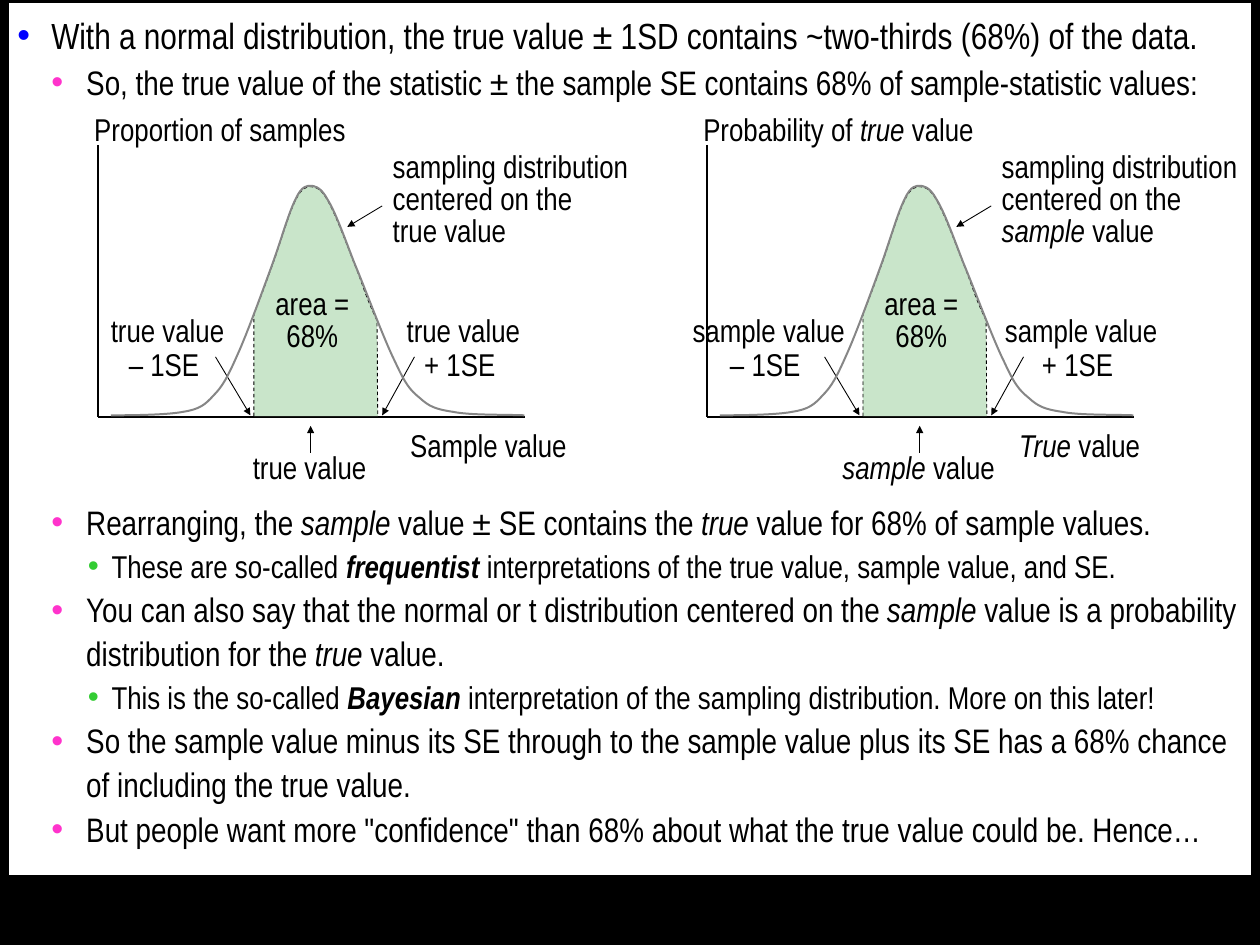
"""Build a slide comparing the sampling distribution of a statistic with that of its true value."""
from dataclasses import dataclass

from lxml.etree import SubElement
from pptx import Presentation
from pptx.dml.color import RGBColor as RGB
from pptx.enum.dml import MSO_LINE_DASH_STYLE as Dash
from pptx.enum.shapes import MSO_CONNECTOR as Conn, MSO_SHAPE as Shape
from pptx.enum.text import MSO_ANCHOR as Anchor, MSO_AUTO_SIZE as Auto, PP_ALIGN as Align
from pptx.oxml.ns import qn
from pptx.util import Inches, Pt

Point = tuple[float, float]


@dataclass(frozen=True)
class Theme:
    font: str = "Arial Narrow"
    bullet_font: str = "Arial"
    ink: str = "000000"
    paper: str = "FFFFFF"
    area: str = "C9E5CA"
    curve: str = "868686"
    label: float = 26
    thin: float = 0.75
    thick: float = 1.63


@dataclass(frozen=True)
class Level:
    size: float
    margin: float
    hang: float
    bullet: str
    strong: bool = False


@dataclass(frozen=True)
class Item:
    level: int
    text: str
    before: float = 1.4


@dataclass(frozen=True)
class Label:
    text: str
    x: float
    y: float
    w: float
    h: float
    align: Align = Align.LEFT
    spacing: float = 1.0
    filled: bool = False


@dataclass(frozen=True)
class Panel:
    x: float
    title: str
    title_w: float
    axis: str
    axis_w: float
    value: str
    centre: str
    source: str
    value_w: float
    lower_x: float
    upper_x: float


THEME = Theme()
LEVELS = (
    Level(30, 0.39, 0.39, "0000FF"),
    Level(28, 0.79, 0.4, "FF33CC"),
    Level(26, 1.08, 0.27, "33CC33", strong=True),
)
ITEMS = (
    Item(0, "With a normal distribution, the true value ± 1SD contains ~two-thirds (68%) of the data."),
    Item(1, "So, the true value of the statistic ± the sample SE contains 68% of sample-statistic values:"),
    Item(1, "Rearranging, the *sample* value ± SE contains the *true* value for 68% of sample values.", 327),
    Item(2, "These are so-called *frequentist* interpretations of the true value, sample value, and SE."),
    Item(1, "You can also say that the normal or t distribution centered on the *sample* value is a "
            "probability distribution for the *true* value."),
    Item(2, "This is the so-called *Bayesian* interpretation of the sampling distribution. More on this later!"),
    Item(1, "So the sample value minus its SE through to the sample value plus its SE has a 68% chance "
            "of including the true value."),
    Item(1, 'But people want more "confidence" than 68% about what the true value could be. Hence…'),
)
PANELS = (
    Panel(0, "Proportion of samples", 2.91, "Sample value", 1.85, "true value", "true value", "true value",
          1.4, 1.18, 4.57),
    Panel(6.98, "Probability of *true* value", 3.12, "*True* value", 1.4, "sample value", "*sample* value",
          "*sample* value", 1.84, 0.87, 4.45),
)
ARROWS = (
    ((4.75, 4.09), (4.38, 4.76)),
    ((2.47, 4.09), (2.87, 4.76)),
    ((3.56, 5.19), (3.56, 4.88)),
    ((4.38, 2.36), (3.98, 2.6)),
)
AXES = (((1.12, 4.78), (6.02, 4.78)), ((1.12, 1.66), (1.12, 4.78)))
AREA = (
    (2.91, 4.77), (2.91, 3.99), (2.91, 4.2), (2.91, 3.6), (3.04, 3.27), (3.03, 3.29), (3.11, 3.07),
    (3.19, 2.86), (3.31, 2.44), (3.39, 2.29), (3.46, 2.14), (3.53, 2.14), (3.56, 2.14),
    (3.59, 2.14), (3.67, 2.14), (3.75, 2.29), (3.84, 2.44), (3.97, 2.79), (4.06, 3.02),
    (4.16, 3.26), (4.18, 3.38), (4.32, 3.67), (4.33, 4.36), (4.32, 4.05), (4.33, 4.77),
)
BELL = (
    (1.27, 4.76), (1.41, 4.76), (1.9, 4.76), (2.1, 4.72), (2.29, 4.69), (2.35, 4.64), (2.45, 4.53),
    (2.55, 4.43), (2.61, 4.32), (2.72, 4.07), (2.83, 3.83), (3, 3.36), (3.11, 3.06),
    (3.22, 2.76), (3.31, 2.43), (3.39, 2.28), (3.46, 2.12), (3.53, 2.13), (3.56, 2.13),
    (3.59, 2.13), (3.67, 2.13), (3.75, 2.28), (3.84, 2.42), (3.94, 2.7), (4.06, 3.01),
    (4.19, 3.32), (4.4, 3.89), (4.53, 4.15), (4.65, 4.41), (4.7, 4.47), (4.81, 4.56),
    (4.92, 4.66), (4.99, 4.69), (5.19, 4.72), (5.39, 4.76), (5.72, 4.75), (6.01, 4.76),
)


def write(p, text: str, size: float, strong: bool = False) -> None:
    """Write text into a paragraph, with the parts between asterisks emphasised."""
    for i, part in enumerate(text.split("*")):
        for j, line in enumerate(part.split("\n")):
            if j:
                p.add_line_break()
            if line:
                r = p.add_run()
                r.text = line
                r.font.name, r.font.size = THEME.font, Pt(size)
                r.font.color.rgb = RGB.from_string(THEME.ink)
                r.font.italic = i % 2 == 1
                r.font.bold = strong and i % 2 == 1


def add_body(s) -> None:
    """Draw the white page with its bulleted text."""
    sp = s.shapes.add_shape(Shape.RECTANGLE, Inches(0.1), Inches(0.03), Inches(14.24), Inches(10))
    sp.shadow.inherit = False
    sp.fill.solid()
    sp.fill.fore_color.rgb = RGB.from_string(THEME.paper)
    sp.line.color.rgb = RGB.from_string(THEME.ink)
    sp.line.width = Pt(THEME.thin)
    tf = sp.text_frame
    tf.word_wrap, tf.vertical_anchor = True, Anchor.TOP
    tf.margin_left = tf.margin_right = Inches(0.1)
    tf.margin_top, tf.margin_bottom = Inches(0.09), Inches(0.05)
    for i, item in enumerate(ITEMS):
        p = tf.add_paragraph() if i else tf.paragraphs[0]
        level = LEVELS[item.level]
        p.level, p.alignment = item.level, Align.LEFT
        p.line_spacing, p.space_before = 1.07, Pt(item.before)
        ppr = p._p.get_or_add_pPr()
        ppr.set("marL", str(Inches(level.margin)))
        ppr.set("indent", str(-Inches(level.hang)))
        SubElement(SubElement(ppr, qn("a:buClr")), qn("a:srgbClr"), val=level.bullet)
        SubElement(ppr, qn("a:buFont"), typeface=THEME.bullet_font)
        SubElement(ppr, qn("a:buChar"), char="•")
        write(p, item.text, level.size, level.strong)


def add_label(s, label: Label, dx: float) -> None:
    """Draw one unwrapped label, moved right by dx."""
    sp = s.shapes.add_textbox(Inches(label.x + dx), Inches(label.y), Inches(label.w), Inches(label.h))
    if label.filled:
        sp.fill.solid()
        sp.fill.fore_color.rgb = RGB.from_string(THEME.paper)
    tf = sp.text_frame
    tf.word_wrap, tf.auto_size = False, Auto.SHAPE_TO_FIT_TEXT
    tf.margin_left = tf.margin_right = tf.margin_top = tf.margin_bottom = 0
    p = tf.paragraphs[0]
    p.alignment, p.line_spacing = label.align, label.spacing
    write(p, label.text, THEME.label)


def add_line(s, start: Point, end: Point, dx: float, width: float, arrow: bool = False) -> None:
    """Draw a straight line, with an arrowhead at its end if asked."""
    c = s.shapes.add_connector(Conn.STRAIGHT, Inches(start[0] + dx), Inches(start[1]),
                               Inches(end[0] + dx), Inches(end[1]))
    c.line.color.rgb = RGB.from_string(THEME.ink)
    c.line.width = Pt(width)
    props = c._element.spPr
    if arrow:
        SubElement(props.find(qn("a:ln")), qn("a:tailEnd"), type="triangle")
    SubElement(props, qn("a:effectLst"))


def add_curve(s, controls: tuple[Point, ...], dx: float, color: str, width: float, fill: str = "") -> None:
    """Draw an open chain of cubic Bézier curves, dashed when it is filled."""
    points = [(Inches(x + dx), Inches(y)) for x, y in controls]
    builder = s.shapes.build_freeform(*points[0])
    builder.add_line_segments(points[3::3], close=False)
    sp = builder.convert_to_shape()
    for i, segment in enumerate(sp._element.findall(".//" + qn("a:lnTo"))):
        segment.tag = qn("a:cubicBezTo")
        segment.remove(segment[0])
        for x, y in points[3 * i + 1:3 * i + 4]:
            SubElement(segment, qn("a:pt"), x=str(x - sp.left), y=str(y - sp.top))
    sp.shadow.inherit = False
    sp.line.color.rgb = RGB.from_string(color)
    sp.line.width = Pt(width)
    if fill:
        sp.fill.solid()
        sp.fill.fore_color.rgb = RGB.from_string(fill)
        sp.line.dash_style = Dash.DASH
    else:
        sp.fill.background()


def add_panel(s, panel: Panel) -> None:
    """Draw one distribution with its axes, labels and arrows."""
    w, mid = panel.value_w, Align.CENTER
    labels = (
        Label(f" {panel.value}\n+ 1SE", panel.upper_x, 3.61, w, 0.79, mid, 0.9, True),
        Label(f" {panel.value}\n– 1SE", panel.lower_x, 3.61, w, 0.79, mid, 0.9, True),
        Label(panel.title, 1.08, 1.26, panel.title_w, 0.44),
        Label(panel.axis, 4.7, 4.88, panel.axis_w, 0.44),
        Label("area =\n68%", 3.15, 3.32, 0.86, 0.74, mid, 0.85),
        Label(f"{panel.centre} ", 3.59 - w / 2, 5.14, w, 0.44, mid),
        Label(f"sampling distribution\ncentered on the\n{panel.source}", 4.5, 1.75, 2.73, 1.12, spacing=0.85),
    )
    for label in labels[:2]:
        add_label(s, label, panel.x)
    for start, end in AXES:
        add_line(s, start, end, panel.x, THEME.thick)
    add_curve(s, AREA, panel.x, THEME.ink, 0, THEME.area)
    for label in labels[2:]:
        add_label(s, label, panel.x)
    for start, end in ARROWS:
        add_line(s, start, end, panel.x, THEME.thin, arrow=True)
    add_curve(s, BELL, panel.x, THEME.curve, THEME.thick)


def main() -> None:
    """Build and save the slide."""
    prs = Presentation()
    prs.slide_width, prs.slide_height = Inches(14.44), Inches(10.83)
    s = prs.slides.add_slide(prs.slide_layouts[6])
    s.background.fill.solid()
    s.background.fill.fore_color.rgb = RGB.from_string(THEME.ink)
    add_body(s)
    for panel in PANELS:
        add_panel(s, panel)
    prs.save("out.pptx")


if __name__ == "__main__":
    main()
